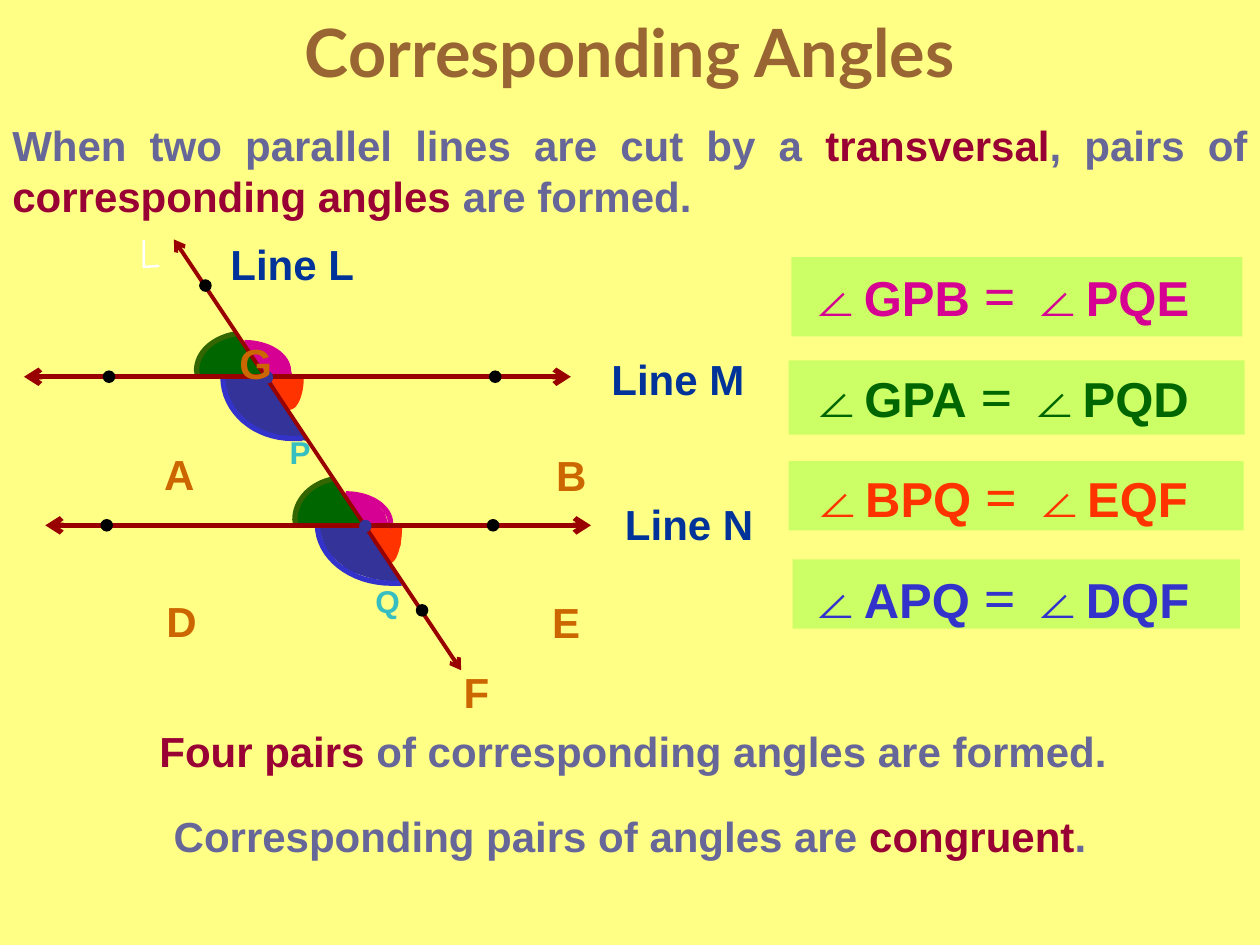
from dataclasses import dataclass
from typing import NamedTuple

from lxml.etree import SubElement
from pptx import Presentation
from pptx.dml.color import RGBColor as Rgb
from pptx.enum.shapes import MSO_CONNECTOR as Connector, MSO_SHAPE as Shape
from pptx.enum.text import MSO_ANCHOR as Anchor, PP_ALIGN as Align
from pptx.oxml.ns import qn
from pptx.util import Pt


@dataclass(frozen=True)
class Theme:
    background: str = "FFFF85"
    title: str = "996633"
    body: str = "666699"
    emphasis: str = "990033"
    line: str = "990000"
    line_name: str = "003399"
    point_name: str = "CC6600"
    vertex_name: str = "37BEC1"
    vertex: str = "333399"
    dot: str = "000000"
    pale: str = "FFFFFF"
    panel: str = "CCFF66"
    title_font: str = "Lato"
    font: str = "Arial"
    equals_font: str = "Times New Roman"
    pale_font: str = "Comic Neue"
    title_size: float = 38
    symbol_size: float = 32
    angle_size: float = 28
    body_size: float = 24
    vertex_size: float = 18


THEME = Theme()


class Box(NamedTuple):
    left: float
    top: float
    width: float
    height: float


class Point(NamedTuple):
    x: float
    y: float


class Part(NamedTuple):
    text: str
    color: str
    size: float = THEME.body_size
    font: str = THEME.font
    bold: bool = True


class Angle(NamedTuple):
    """Outlines are fractions of a box; each box stands at vertex P, then Q."""
    fill: str
    edge: str
    outline: list[Point]
    fill_boxes: tuple[Box, Box]
    arc: list[Point]
    arc_boxes: tuple[Box, Box]


class Line(NamedTuple):
    start: Point
    end: Point
    width: float


class Equation(NamedTuple):
    left: str
    right: str
    color: str


def bezier(a: tuple, b: tuple, c: tuple, d: tuple, steps: int = 16) -> list[Point]:
    points = []
    for step in range(steps + 1):
        t = step / steps
        weights = ((1 - t) ** 3, 3 * t * (1 - t) ** 2, 3 * t * t * (1 - t), t ** 3)
        points.append(Point(*(sum(w * p for w, p in zip(weights, axis))
                              for axis in zip(a, b, c, d))))
    return points


ANGLES = [
    Angle("FF3300", "FF3300",
          bezier((.75, 1), (.13, 0), (0, .22), (1, .22)) + [(.97, .63)],
          (Box(148.3, 211.7, 23, 23), Box(203.8, 295.9, 25.9, 25.2)),
          bezier((0, 1), (.5, 1), (1, .54), (1, 0)),
          (Box(165.6, 216, 6.5, 16.6), Box(222.5, 300.2, 5.8, 20.2))),
    Angle("006600", "336600",
          [(1, 1), (0, 1), (.04, .58), (.17, .23), (.43, .03), (.6, 0), (.77, .42)],
          (Box(112.3, 191.5, 38.2, 22.3), Box(168.5, 274.3, 38.9, 25.2)),
          bezier((.82, 0), (.34, .09), (0, .45), (0, .88)) + [(.02, 1)],
          (Box(112.3, 190.8, 27.4, 23.8), Box(168.5, 273.6, 27.4, 26.6))),
    Angle("333399", "3333CC",
          [(0, 0), (.09, .43), (.36, .78), (.64, .92), (1, 1), (.55, 0)],
          (Box(127.4, 216, 48.2, 36), Box(182.2, 301.7, 48.2, 31.7)),
          [(1, 1)] + bezier((.88, 1), (.4, 1), (0, .57), (0, 0)),
          (Box(127.4, 215.3, 45.4, 35.3), Box(181.4, 299.5, 48.2, 33.8))),
    Angle("D60093", "D60093",
          [(0, 0), (.46, .12), (.72, .35), (.9, .62), (.97, .92), (.85, 1),
           (.46, 1), (.38, .85), (.26, .6), (.13, .3), (.04, .12)],
          (Box(139.7, 196.6, 28.1, 18.7), Box(196.6, 281.5, 25.9, 18.7)),
          bezier((0, 0), (.54, 0), (1, .38), (1, .88)) + [(.97, 1)],
          (Box(139.7, 195.8, 25.2, 18.7), Box(197.6, 282.2, 25.6, 19.4))),
]

PANELS = [Box(452.2, 146.9, 257.8, 45.4), Box(450.7, 205.9, 260.6, 42.5),
          Box(450.7, 263.5, 259.9, 39.6), Box(452.9, 319.7, 255.6, 39.6)]

EQUATIONS = [Equation("GPB", "PQE", "D60093"), Equation("GPA", "PQD", "006600"),
             Equation("BPQ", "EQF", "FF3300"), Equation("APQ", "DQF", "3333CC")]

LINES = [Line(Point(25.9, 300.2), Point(337.7, 300.2), 3),
         Line(Point(13.7, 215.3), Point(326.2, 215.3), 3),
         Line(Point(263.5, 383), Point(99.4, 136.8), 2.25)]

DOTS = [Point(283, 215.3), Point(62.3, 215.3), Point(61, 300.2), Point(281.8, 300.2),
        Point(117.4, 163.2), Point(241.2, 348.8)]
VERTICES = [Point(152.6, 215.6), Point(208.8, 300.6)]

LINE_NAMES = {"Line L": Point(167, 150.5), "Line M": Point(387.4, 216.7),
              "Line N": Point(393.8, 299.5)}
POINT_NAMES = {"A": Point(102.5, 270.5), "B": Point(326.5, 271.5), "D": Point(103.7, 355),
               "E": Point(323.5, 355.5), "G": Point(146.2, 207.5), "F": Point(272.2, 395.5)}
VERTEX_NAMES = {"P": Point(171.5, 258.5), "Q": Point(221.5, 343.5)}


def paint(shape, color: str) -> None:
    shape.shadow.inherit = False
    shape.fill.solid()
    shape.fill.fore_color.rgb = Rgb.from_string(color)
    shape.line.fill.background()


def place(shape, box: Box) -> None:
    shape.left, shape.top, shape.width, shape.height = map(Pt, box)


def write(frame, paragraphs: list[list[Part]], align=Align.CENTER,
          spacing: float = 1, anchor=Anchor.TOP) -> None:
    frame.word_wrap = True
    frame.vertical_anchor = anchor
    for index, parts in enumerate(paragraphs):
        para = frame.add_paragraph() if index else frame.paragraphs[0]
        para.alignment = align
        para.line_spacing = spacing
        for part in parts:
            span = para.add_run()
            span.text = part.text
            span.font.name, span.font.size = part.font, Pt(part.size)
            span.font.bold = part.bold
            span.font.color.rgb = Rgb.from_string(part.color)


def add_text(page, box: Box, paragraphs: list[list[Part]], **layout) -> None:
    write(page.shapes.add_textbox(*map(Pt, box)).text_frame, paragraphs, **layout)


def add_label(page, center: Point, part: Part, width: float = 120) -> None:
    height = part.size * 1.2 + 7.2
    add_text(page, Box(center.x - width / 2, center.y - height / 2, width, height), [[part]])


def add_shape(page, kind, box: Box, color: str) -> None:
    paint(page.shapes.add_shape(kind, *map(Pt, box)), color)


def add_dot(page, center: Point, color: str, size: float = 7.2) -> None:
    add_shape(page, Shape.OVAL, Box(center.x - size / 2, center.y - size / 2, size, size), color)


def add_outline(page, box: Box, fractions: list[Point], close: bool):
    points = [(Pt(box.left + x * box.width), Pt(box.top + y * box.height))
              for x, y in fractions]
    builder = page.shapes.build_freeform(*points[0])
    builder.add_line_segments(points[1:], close=close)
    return builder.convert_to_shape()


def add_arc(page, box: Box, angle: Angle) -> None:
    arc = add_outline(page, box, angle.arc, close=False)
    arc.shadow.inherit = False
    arc.fill.background()
    arc.line.color.rgb = Rgb.from_string(angle.edge)
    arc.line.width = Pt(3)


def add_line(page, line: Line) -> None:
    connector = page.shapes.add_connector(Connector.STRAIGHT, *map(Pt, line.start + line.end))
    connector.line.color.rgb = Rgb.from_string(THEME.line)
    connector.line.width = Pt(line.width)
    properties = connector._element.spPr
    for end in ("a:headEnd", "a:tailEnd"):
        SubElement(properties.find(qn("a:ln")), qn(end), type="arrow")
    SubElement(properties, qn("a:effectLst"))


def equation_parts(equation: Equation) -> list[Part]:
    symbol = Part("∠", equation.color, THEME.symbol_size)
    equals = Part(" = ", equation.color, THEME.symbol_size, THEME.equals_font)
    left, right = (Part(name, equation.color, THEME.angle_size)
                   for name in (equation.left, equation.right))
    return [symbol, left, equals, symbol, right]


def add_statements(page) -> None:
    body, emphasis = THEME.body, THEME.emphasis
    add_text(page, Box(0, 64.8, 720, 64.8),
             [[Part("When two parallel lines are cut by a ", body), Part("transversal", emphasis),
               Part(", pairs of ", body), Part("corresponding angles", emphasis),
               Part(" are formed.", body)]], align=Align.JUSTIFY, anchor=Anchor.MIDDLE)
    add_text(page, Box(7.2, 411.1, 709.2, 36),
             [[Part("Four pairs", emphasis),
               Part(" of corresponding angles are formed.", body)]])
    add_text(page, Box(7.2, 459.4, 705.6, 36),
             [[Part("Corresponding pairs of angles are ", body),
               Part("congruent", emphasis), Part(".", body)]])


def add_diagram(page) -> None:
    for angle in ANGLES:
        for box in angle.fill_boxes:
            paint(add_outline(page, box, angle.outline, close=True), angle.fill)
    for angle in ANGLES:
        for box in angle.arc_boxes:
            add_arc(page, box, angle)
    for line in LINES:
        add_line(page, line)
    for centers, color in ((DOTS, THEME.dot), (VERTICES, THEME.vertex)):
        for center in centers:
            add_dot(page, center, color)
    for names, color, size in ((LINE_NAMES, THEME.line_name, THEME.body_size),
                               (POINT_NAMES, THEME.point_name, THEME.body_size),
                               (VERTEX_NAMES, THEME.vertex_name, THEME.vertex_size)):
        for name, center in names.items():
            add_label(page, center, Part(name, color, size), 120 if len(name) > 1 else 42)
    add_label(page, Point(86, 144), Part("L", THEME.pale, font=THEME.pale_font, bold=False), 48)


def main() -> None:
    deck = Presentation()
    deck.slide_width, deck.slide_height = Pt(720), Pt(540)
    page = deck.slides.add_slide(deck.slide_layouts[5])
    page.background.fill.solid()
    page.background.fill.fore_color.rgb = Rgb.from_string(THEME.background)
    title = page.shapes.title
    place(title, Box(0, 2.9, 720, 52.6))
    write(title.text_frame, [[Part("Corresponding Angles", THEME.title,
                                   THEME.title_size, THEME.title_font)]])
    add_statements(page)
    for panel in PANELS:
        add_shape(page, Shape.RECTANGLE, panel, THEME.panel)
    add_text(page, Box(442.1, 126, 257, 237.6),
             [equation_parts(equation) for equation in EQUATIONS], spacing=1.5)
    add_diagram(page)
    deck.save("out.pptx")


if __name__ == "__main__":
    main()
